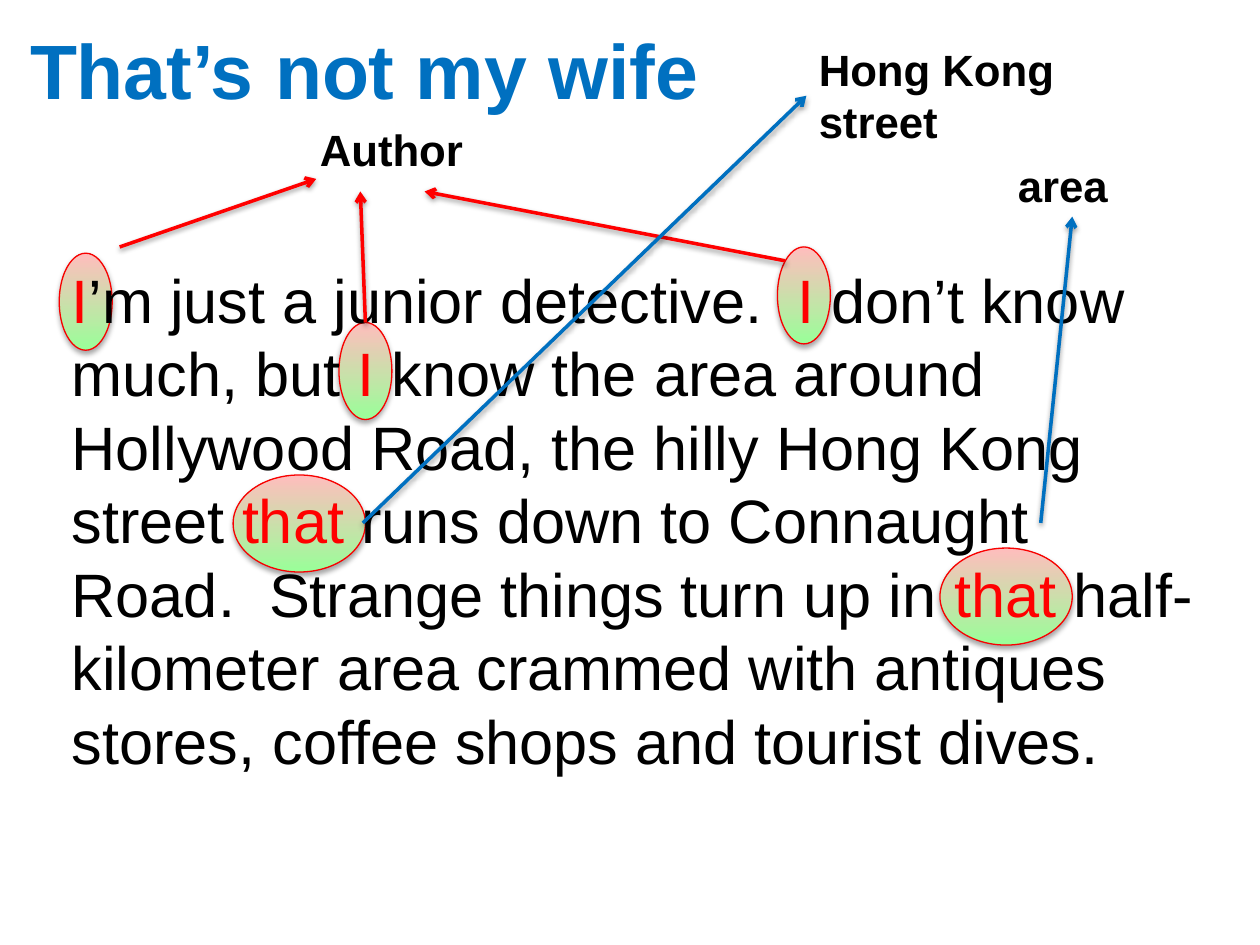
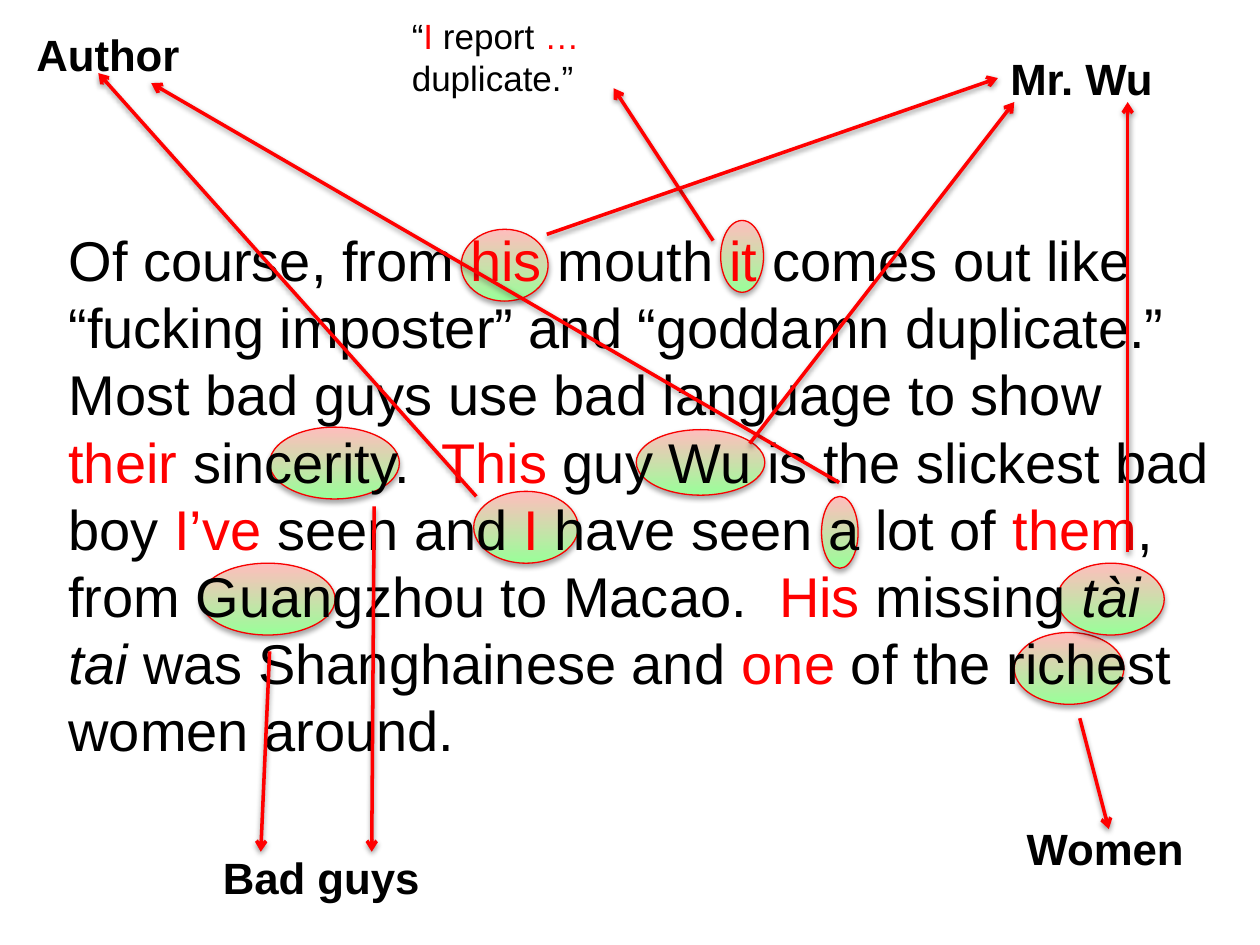
from dataclasses import dataclass
from typing import Any, NamedTuple

from lxml.etree import SubElement
from pptx import Presentation
from pptx.dml.color import RGBColor
from pptx.enum.shapes import MSO_CONNECTOR, MSO_SHAPE
from pptx.enum.text import MSO_ANCHOR, PP_ALIGN
from pptx.oxml.ns import qn
from pptx.util import Inches, Pt

COLUMNS, ROWS = 100, 75
SLIDE_WIDTH, SLIDE_HEIGHT = Inches(10), Inches(7.5)


@dataclass(frozen=True)
class Theme:
    font: str = "Arial"
    ink: str = "000000"
    reference: str = "FF0000"
    heading: str = "0070C0"
    mark_outline: str = "F90000"
    mark_gradient: tuple[str, str] = ("99FF99", "FFBDBD")
    title_size: int = 44
    label_size: int = 25
    quote_size: int = 20
    mark_line: float = 0.75
    arrow_line: float = 2


THEME = Theme()


class Box(NamedTuple):
    """A rectangle in grid columns and rows."""
    left: float
    top: float
    width: float
    height: float


class Arrow(NamedTuple):
    """A line from a word to the label it refers to, in grid units."""
    start_column: float
    start_row: float
    end_column: float
    end_row: float
    color: str = THEME.reference


class Text(NamedTuple):
    """Wording in a box; |bars| enclose references and *stars* italics."""
    wording: str
    box: Box
    size: int = THEME.label_size
    bold: bool = True
    color: str = THEME.ink
    anchor: MSO_ANCHOR = MSO_ANCHOR.MIDDLE


class Page(NamedTuple):
    marks: list[Box]
    texts: list[Text]
    arrows: list[Arrow]


def across(columns: float) -> int:
    return round(SLIDE_WIDTH * columns / COLUMNS)


def down(rows: float) -> int:
    return round(SLIDE_HEIGHT * rows / ROWS)


def place(box: Box) -> tuple[int, int, int, int]:
    return across(box.left), down(box.top), across(box.width), down(box.height)


def set_format(target: Any, values: dict[str, Any]) -> None:
    for name, value in values.items():
        setattr(target, name, value)


def add_shadow(shape: Any, opacity: int, distance: float) -> None:
    effects = SubElement(shape._element.spPr, qn("a:effectLst"))
    shadow = SubElement(effects, qn("a:outerShdw"), {
        "blurRad": str(Pt(3.1)), "dist": str(Pt(distance)),
        "dir": "5400000", "rotWithShape": "0"})
    color = SubElement(shadow, qn("a:srgbClr"), val=THEME.ink)
    SubElement(color, qn("a:alpha"), val=str(opacity * 1000))


def draw_mark(slide: Any, box: Box) -> None:
    shape = slide.shapes.add_shape(MSO_SHAPE.OVAL, *place(box))
    shape.fill.gradient()
    shape.fill.gradient_angle = 90
    for position, (stop, color) in enumerate(
            zip(shape.fill.gradient_stops, THEME.mark_gradient)):
        stop.position = position
        stop.color.rgb = RGBColor.from_string(color)
    shape.line.color.rgb = RGBColor.from_string(THEME.mark_outline)
    shape.line.width = Pt(THEME.mark_line)
    add_shadow(shape, 35, 1.8)


def draw_text(slide: Any, text: Text) -> None:
    frame = slide.shapes.add_textbox(*place(text.box)).text_frame
    set_format(frame, {"word_wrap": True, "vertical_anchor": text.anchor})
    paragraph = frame.paragraphs[0]
    paragraph.alignment = PP_ALIGN.LEFT
    for part_number, part in enumerate(text.wording.split("|")):
        color = THEME.reference if part_number % 2 else text.color
        for piece_number, piece in enumerate(part.split("*")):
            if not piece:
                continue
            run = paragraph.add_run()
            run.text = piece
            set_format(run.font, {
                "name": THEME.font, "size": Pt(text.size),
                "bold": text.bold, "italic": piece_number % 2 == 1})
            run.font.color.rgb = RGBColor.from_string(color)


def draw_arrow(slide: Any, arrow: Arrow) -> None:
    connector = slide.shapes.add_connector(
        MSO_CONNECTOR.STRAIGHT,
        across(arrow.start_column), down(arrow.start_row),
        across(arrow.end_column), down(arrow.end_row))
    connector.line.color.rgb = RGBColor.from_string(arrow.color)
    connector.line.width = Pt(THEME.arrow_line)
    SubElement(connector.line._get_or_add_ln(), qn("a:tailEnd"), type="arrow")
    add_shadow(connector, 38, 1.6)


def passage(wording: str, box: Box, size: int) -> Text:
    return Text(wording, box, size, bold=False, anchor=MSO_ANCHOR.TOP)


WIFE = Page(
    marks=[
        *(Box(left, top, 10.5, 7.7) for left, top in ((74.6, 43.5), (18.5, 37.7))),
        *(Box(left, top, 4.2, 7.7)
          for left, top in ((61.7, 19.6), (26.9, 25.6), (4.7, 20.1))),
    ],
    texts=[
        Text("That’s not my wife", Box(1.4, 0.9, 57.7, 9.1),
             THEME.title_size, color=THEME.heading),
        passage(
            "|I|’m just a junior detective.  |I| don’t know much, but |I| know "
            "the area around Hollywood Road, the hilly Hong Kong street |that| "
            "runs down to Connaught Road.  Strange things turn up in |that| "
            "half-kilometer area crammed with antiques stores, coffee shops "
            "and tourist dives.", Box(4.7, 20.3, 91.5, 45.5), 35),
        Text("Author", Box(24.4, 8.1, 14.6, 7.5)),
        Text("Hong Kong street", Box(64, 3.8, 21, 7.5)),
        Text("area", Box(79.8, 11.4, 10.2, 6.6)),
    ],
    arrows=[
        Arrow(9.5, 19.6, 25.1, 14.2),
        Arrow(29, 25.6, 28.6, 15.2),
        Arrow(62.3, 20.7, 33.7, 15.2),
        Arrow(28.8, 41.5, 64, 7.6, THEME.heading),
        Arrow(82.6, 41.5, 85.1, 17.2, THEME.heading),
    ],
)

MISTER_WU = Page(
    marks=[
        Box(80.5, 50.2, 8.7, 5.7),
        Box(83.9, 44.7, 8.5, 5.7),
        Box(65.2, 39.4, 2.9, 5.7),
        Box(15.9, 44.7, 10.7, 5.7),
        Box(37.6, 39, 8.3, 5.7),
        Box(50.5, 34.1, 10.2, 5.2),
        Box(21.4, 33.9, 10.3, 5.7),
        Box(57.2, 17.5, 3.4, 5.7),
        Box(36.6, 18.2, 6.9, 5.7),
    ],
    texts=[
        passage(
            "Of course, from |his| mouth |it| comes out like “fucking imposter” "
            "and “goddamn duplicate.”  Most bad guys use bad language to show "
            "|their| sincerity.  |This| guy Wu is the slickest bad boy |I’ve| "
            "seen and| I |have seen a lot of |them|, from Guangzhou to Macao.  "
            "|His |missing *tài tai* was Shanghainese and |one| of the richest "
            "women around.", Box(4.45, 17.4, 92.65, 43.8), 32),
        Text("“|I| report |…|duplicate.”", Box(31.7, 1.1, 18.7, 6.7),
             THEME.quote_size, bold=False),
        Text("Mr. Wu", Box(79.2, 2.4, 14.6, 7.5)),
        Text("Bad guys", Box(16.7, 67.6, 20.9, 4)),
        Text("Author", Box(1.9, 0.5, 14.6, 7.5)),
        Text("Women", Box(80.5, 65.3, 14.8, 4)),
    ],
    arrows=[
        Arrow(56.6, 19.1, 48.7, 7),
        Arrow(29.7, 40.2, 29.5, 67.6),
        Arrow(37.8, 39.4, 7.8, 5.8),
        Arrow(21.4, 51.7, 20.7, 67.6),
        Arrow(66.6, 38.3, 12, 6.6),
        Arrow(43.4, 18.6, 79.2, 6.2),
        Arrow(59.5, 35.2, 80.5, 8.1),
        Arrow(89.5, 43.8, 89.5, 8.1),
        Arrow(85.7, 57, 88, 65.8),
    ],
)


def draw_page(presentation: Any, page: Page) -> None:
    slide = presentation.slides.add_slide(presentation.slide_layouts[6])
    for mark in page.marks:
        draw_mark(slide, mark)
    for text in page.texts:
        draw_text(slide, text)
    for arrow in page.arrows:
        draw_arrow(slide, arrow)


def main() -> None:
    presentation = Presentation()
    set_format(presentation, {
        "slide_width": SLIDE_WIDTH, "slide_height": SLIDE_HEIGHT})
    for page in (WIFE, MISTER_WU):
        draw_page(presentation, page)
    presentation.save("out.pptx")


if __name__ == "__main__":
    main()
